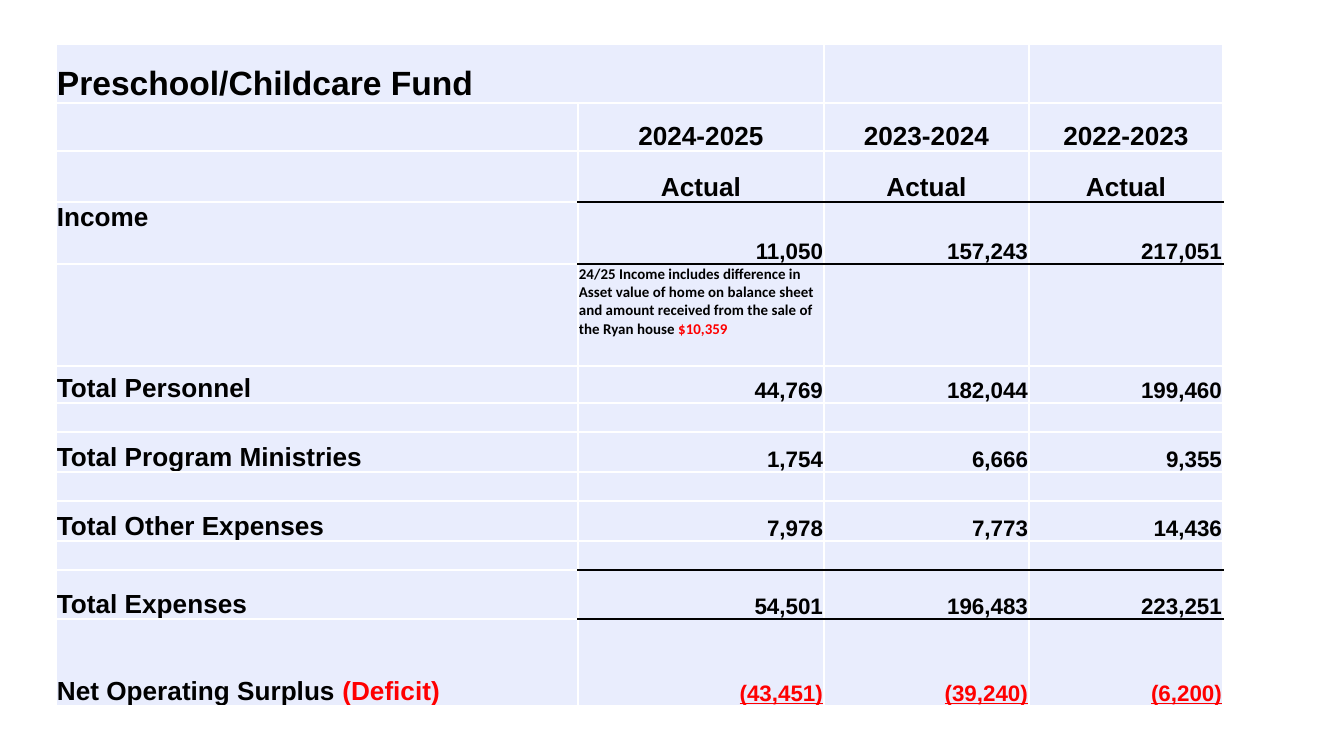
from dataclasses import dataclass

from lxml.etree import SubElement
from pptx import Presentation
from pptx.dml.color import RGBColor
from pptx.enum.text import MSO_ANCHOR, PP_ALIGN
from pptx.oxml.ns import qn
from pptx.util import Pt

EMU_PER_PX = 914400 / 134.4


def px(n):
    return round(n * EMU_PER_PX)


@dataclass(frozen=True)
class Theme:
    font: str = "Arial"
    note_font: str = "Calibri"
    ink: str = "000000"
    deficit: str = "FF0000"
    cell: str = "E9EDFD"
    grid: str = "FFFFFF"
    title: int = 18
    label: int = 14
    amount: int = 12
    note: int = 8
    line: int = 1


class SlideBuilder:
    def __init__(self, slide, theme):
        self.s = slide
        self.t = theme

    def table(self, left, top, widths, heights):
        """Add an unstyled grid and return its table."""
        shape = self.s.shapes.add_table(len(heights), len(widths), px(left), px(top),
                                        px(sum(widths)), px(sum(heights)))
        table = shape.table
        table.first_row = table.horz_banding = False
        for column, width in zip(table.columns, widths):
            column.width = px(width)
        for row, height in zip(table.rows, heights):
            row.height = px(height)
        return table

    def cell(self, cell, top, bottom):
        """Style a cell, with the given colours for its top and bottom borders."""
        cell.margin_left = cell.margin_right = cell.margin_top = px(1)
        cell.margin_bottom = 0
        cell.vertical_anchor = MSO_ANCHOR.BOTTOM
        tc_pr = cell._tc.get_or_add_tcPr()
        sides = {"L": self.t.grid, "R": self.t.grid, "T": top, "B": bottom}
        for side, color in sides.items():
            ln = SubElement(tc_pr, qn(f"a:ln{side}"), w=str(Pt(self.t.line)))
            SubElement(SubElement(ln, qn("a:solidFill")), qn("a:srgbClr"), val=color)
        cell.fill.solid()
        cell.fill.fore_color.rgb = RGBColor.from_string(self.t.cell)

    def blank(self, cell):
        """Keep an empty cell from stretching its row."""
        p = cell.text_frame.paragraphs[0]
        SubElement(p._p, qn("a:endParaRPr"), sz=str(self.t.note * 100))

    def text(self, cell, runs, size, align=PP_ALIGN.LEFT, font=None, underline=None):
        """Write runs given as (text, colour) pairs."""
        p = cell.text_frame.paragraphs[0]
        p.alignment = align
        for content, color in runs:
            r = p.add_run()
            r.text = content
            r.font.name = font or self.t.font
            r.font.size = Pt(size)
            r.font.bold = True
            r.font.underline = underline
            r.font.color.rgb = RGBColor.from_string(color)


COLUMN_WIDTHS = [522, 246, 205, 194]
ROW_HEIGHTS = [59, 48, 51, 62, 102, 37, 29, 40, 29, 40, 29, 49, 87]
RULED_BELOW = {2, 3, 10, 11}
INCOME_ROW, NOTE_ROW, NET_ROW = 3, 4, 12

HEADINGS = {
    1: ["2024-2025", "2023-2024", "2022-2023"],
    2: ["Actual"] * 3,
}
AMOUNTS = {
    INCOME_ROW: ("Income", ["11,050", "157,243", "217,051"]),
    5: ("Total Personnel", ["44,769", "182,044", "199,460"]),
    7: ("Total Program Ministries", ["1,754", "6,666", "9,355"]),
    9: ("Total Other Expenses", ["7,978", "7,773", "14,436"]),
    11: ("Total Expenses", ["54,501", "196,483", "223,251"]),
    NET_ROW: ("Net Operating Surplus ", ["(43,451)", "(39,240)", "(6,200)"]),
}
INCOME_NOTE = ("24/25 Income includes difference in Asset value of home on balance sheet "
               "and amount received from the sale of the Ryan house ")


def build_fund_table(b):
    t = b.t
    table = b.table(56, 44, COLUMN_WIDTHS, ROW_HEIGHTS)

    for i in range(len(ROW_HEIGHTS)):
        for j in range(len(COLUMN_WIDTHS)):
            top, bottom = (t.ink if j and k in RULED_BELOW else t.grid for k in (i - 1, i))
            b.cell(table.cell(i, j), top, bottom)

    table.cell(0, 0).merge(table.cell(0, 1))
    b.text(table.cell(0, 0), [("Preschool/Childcare Fund", t.ink)], t.title)

    for i, headings in HEADINGS.items():
        for j, heading in enumerate(headings, 1):
            b.text(table.cell(i, j), [(heading, t.ink)], t.label, PP_ALIGN.CENTER)

    for i, (label, amounts) in AMOUNTS.items():
        is_net = i == NET_ROW
        runs = [(label, t.ink)]
        if is_net:
            runs.append(("(Deficit)", t.deficit))
        b.text(table.cell(i, 0), runs, t.label)
        for j, amount in enumerate(amounts, 1):
            b.text(table.cell(i, j), [(amount, t.deficit if is_net else t.ink)], t.amount,
                   PP_ALIGN.RIGHT, underline=is_net or None)

    note = table.cell(NOTE_ROW, 1)
    b.text(note, [(INCOME_NOTE, t.ink), ("$10,359", t.deficit)], t.note, font=t.note_font)
    for cell in (table.cell(INCOME_ROW, 0), note):
        cell.vertical_anchor = MSO_ANCHOR.TOP

    for cell in table.iter_cells():
        if not cell.text:
            b.blank(cell)


def main():
    prs = Presentation()
    prs.slide_width, prs.slide_height = px(1344), px(756)
    s = prs.slides.add_slide(prs.slide_layouts[6])
    build_fund_table(SlideBuilder(s, Theme()))
    prs.save("out.pptx")


if __name__ == "__main__":
    main()
